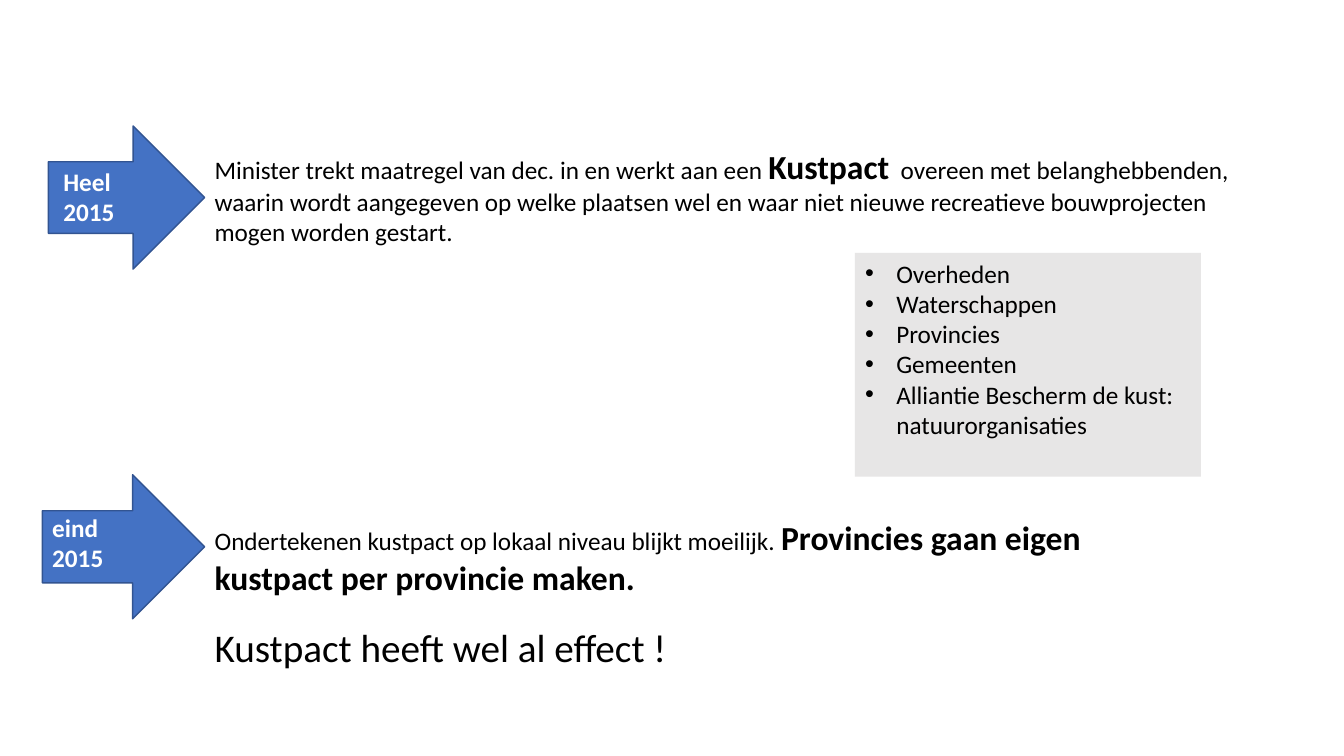
from lxml import etree
from pptx import Presentation
from pptx.dml.color import RGBColor
from pptx.enum.shapes import MSO_SHAPE
from pptx.enum.text import MSO_ANCHOR, MSO_AUTO_SIZE, PP_ALIGN
from pptx.oxml.ns import qn
from pptx.util import Pt

EMU_PER_PX = 9144  # 100 px to the inch
FONT = "Calibri"
BLACK, WHITE = "000000", "FFFFFF"
ARROW_FILL, ARROW_LINE, LIST_FILL = "4472C4", "325491", "E7E6E6"

STAKEHOLDERS = [
    "Overheden",
    "Waterschappen",
    "Provincies",
    "Gemeenten",
    "Alliantie Bescherm de kust: natuurorganisaties",
]


def px(*lengths):
    return [length * EMU_PER_PX for length in lengths]


def color(hex_value):
    return RGBColor.from_string(hex_value)


def format_run(run, size, bold=False, font_color=BLACK):
    run.font.name = FONT
    run.font.size = Pt(size)
    run.font.bold = bold
    run.font.color.rgb = color(font_color)


def add_text(shapes, box, parts, font_color=BLACK):
    """Add one paragraph made of (text, size, bold) parts."""
    text_frame = shapes.add_textbox(*px(*box)).text_frame
    text_frame.word_wrap = True
    paragraph = text_frame.paragraphs[0]
    for text, size, bold in parts:
        run = paragraph.add_run()
        run.text = text
        format_run(run, size, bold, font_color)


def add_date_arrow(slide, arrow_box, label_box, label):
    shapes = slide.shapes.add_group_shape().shapes
    arrow = shapes.add_shape(MSO_SHAPE.RIGHT_ARROW, *px(*arrow_box))
    arrow.shadow.inherit = False
    arrow.fill.solid()
    arrow.fill.fore_color.rgb = color(ARROW_FILL)
    arrow.line.color.rgb = color(ARROW_LINE)
    arrow.line.width = Pt(1)
    add_text(shapes, label_box, [(label, 18, True)], WHITE)


def set_bullet(paragraph, indent):
    properties = paragraph._p.get_or_add_pPr()
    properties.set("marL", str(indent))
    properties.set("indent", str(-indent))
    etree.SubElement(properties, qn("a:buFont")).set("typeface", "Arial")
    etree.SubElement(properties, qn("a:buChar")).set("char", "•")


def fill_list(placeholder, box, items):
    placeholder.left, placeholder.top, placeholder.width, placeholder.height = px(*box)
    placeholder.fill.solid()
    placeholder.fill.fore_color.rgb = color(LIST_FILL)
    text_frame = placeholder.text_frame
    text_frame.text = "\n".join(items)
    text_frame.word_wrap = True
    text_frame.auto_size = MSO_AUTO_SIZE.NONE
    text_frame.vertical_anchor = MSO_ANCHOR.TOP
    [indent] = px(31)
    for paragraph in text_frame.paragraphs:
        paragraph.alignment = PP_ALIGN.LEFT
        paragraph.line_spacing = 1.0
        paragraph.space_before = paragraph.space_after = Pt(0)
        set_bullet(paragraph, indent)
        format_run(paragraph.runs[0], 18)


def main():
    presentation = Presentation()
    presentation.slide_width, presentation.slide_height = px(1333, 750)
    slide = presentation.slides.add_slide(presentation.slide_layouts[1])
    title, body = slide.placeholders
    title.element.getparent().remove(title.element)

    add_text(slide.shapes, (203, 140, 1048, 111), [
        ("Minister trekt maatregel van dec. in en werkt aan een ", 18, False),
        ("Kustpact", 24, True),
        ("  overeen met belanghebbenden, waarin wordt aangegeven op welke plaatsen "
         "wel en waar niet nieuwe recreatieve bouwprojecten mogen worden gestart.", 18, False),
    ])
    fill_list(body, (848, 251, 343, 222), STAKEHOLDERS)
    add_date_arrow(slide, (42, 471, 161, 143), (42, 503, 94, 71), "eind 2015")
    add_date_arrow(slide, (48, 125, 155, 142), (53, 160, 106, 71), "Heel 2015")
    add_text(slide.shapes, (203, 508, 988, 91), [
        ("Ondertekenen kustpact op lokaal niveau blijkt moeilijk. ", 18, False),
        ("Provincies gaan eigen kustpact per provincie maken.", 24, True),
    ])
    add_text(slide.shapes, (203, 613, 988, 57), [("Kustpact heeft wel al effect !", 28, False)])
    presentation.save("out.pptx")


if __name__ == "__main__":
    main()
